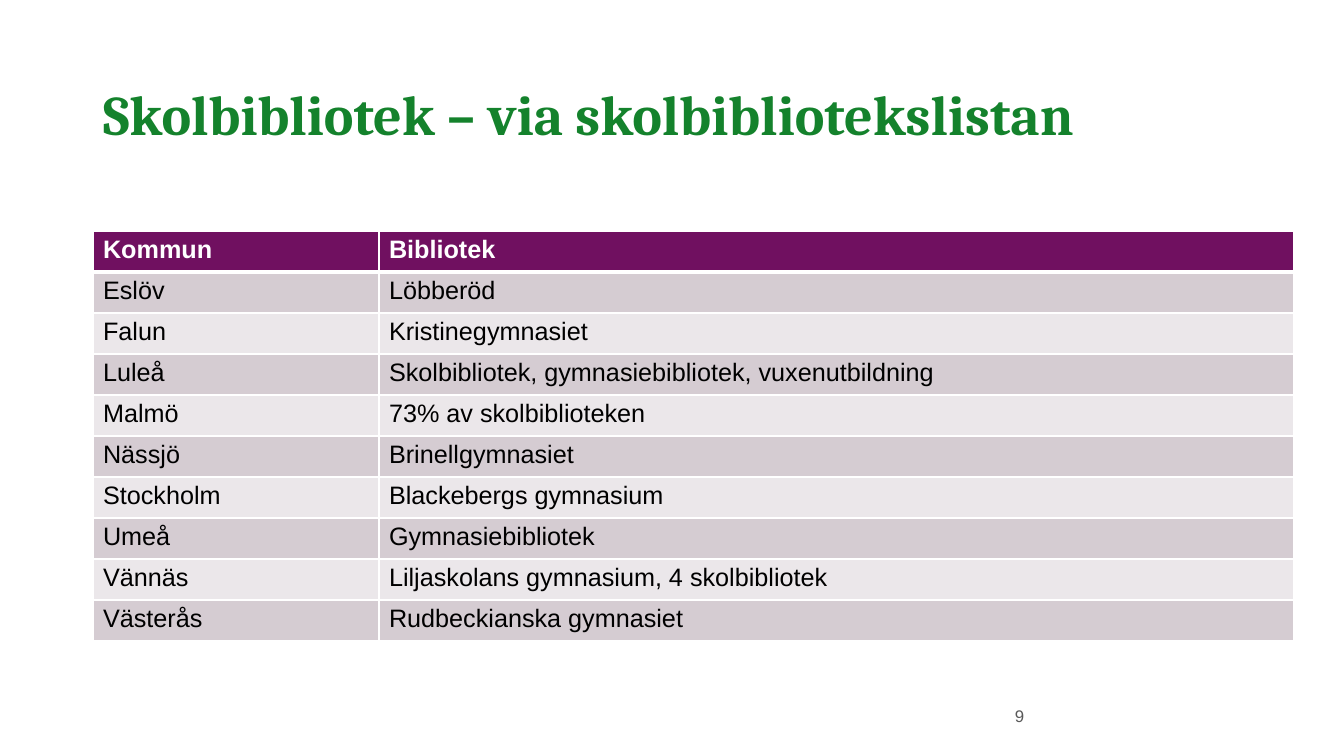
"""Build a slide listing school libraries by municipality."""
from lxml import etree
from pptx import Presentation
from pptx.dml.color import RGBColor
from pptx.enum.text import MSO_ANCHOR, PP_ALIGN
from pptx.oxml.ns import qn
from pptx.util import Emu, Pt

TOP = MSO_ANCHOR.TOP
LEFT = PP_ALIGN.LEFT

GREEN = RGBColor(0x14, 0x82, 0x2C)
PURPLE = RGBColor(0x70, 0x10, 0x60)
MAUVE = RGBColor(0xD5, 0xCC, 0xD2)
PALE = RGBColor(0xEB, 0xE7, 0xEA)
WHITE = RGBColor(0xFF, 0xFF, 0xFF)
BLACK = RGBColor(0x00, 0x00, 0x00)
GREY = RGBColor(0x59, 0x59, 0x59)

HEADING_FONT = "Cambria"
BODY_FONT = "Arial"
PX_PER_INCH = 100.8

LIBRARIES = [
    ("Kommun", "Bibliotek"),
    ("Eslöv", "Löbberöd"),
    ("Falun", "Kristinegymnasiet"),
    ("Luleå", "Skolbibliotek, gymnasiebibliotek, vuxenutbildning"),
    ("Malmö", "73% av skolbiblioteken"),
    ("Nässjö", "Brinellgymnasiet"),
    ("Stockholm", "Blackebergs gymnasium"),
    ("Umeå", "Gymnasiebibliotek"),
    ("Vännäs", "Liljaskolans gymnasium, 4 skolbibliotek"),
    ("Västerås", "Rudbeckianska gymnasiet"),
]


def px(length):
    return Emu(round(length * 914400 / PX_PER_INCH))


class SlideBuilder:
    def __init__(self, presentation):
        layout = presentation.slide_layouts[5]
        self.slide = presentation.slides.add_slide(layout)

    def add_text(self, frame, text, size, color, bold=False, font=BODY_FONT):
        frame.word_wrap = True
        paragraph = frame.paragraphs[0]
        paragraph.alignment = LEFT
        run = paragraph.add_run()
        run.text = text
        run.font.name = font
        run.font.size = Pt(size)
        run.font.bold = bold
        run.font.color.rgb = color
        return paragraph

    def title(self, text, left, top, width, height):
        heading = self.slide.shapes.title
        heading.left, heading.top = px(left), px(top)
        heading.width, heading.height = px(width), px(height)
        heading.text_frame.vertical_anchor = TOP
        line = self.add_text(heading.text_frame, text, 40, GREEN, True, HEADING_FONT)
        line.line_spacing = 0.9

    def label(self, text, left, top, width, height):
        box = self.slide.shapes.add_textbox(px(left), px(top), px(width), px(height))
        self.add_text(box.text_frame, text, 12, GREY)

    def borders(self, cell, bottom):
        properties = cell._tc.get_or_add_tcPr()
        for side, points in (("L", 1), ("R", 1), ("T", 1), ("B", bottom)):
            line = etree.SubElement(properties, qn(f"a:ln{side}"), w=str(Pt(points)))
            fill = etree.SubElement(line, qn("a:solidFill"))
            etree.SubElement(fill, qn("a:srgbClr"), val=str(WHITE))

    def table(self, rows, left, top, column_widths, row_height):
        grid = self.slide.shapes.add_table(
            len(rows), len(column_widths), px(left), px(top),
            px(sum(column_widths)), px(row_height * len(rows))).table
        for column, width in zip(grid.columns, column_widths):
            column.width = px(width)
        for index, values in enumerate(rows):
            grid.rows[index].height = px(row_height)
            header = index == 0
            band = PURPLE if header else (PALE, MAUVE)[index % 2]
            for position, value in enumerate(values):
                cell = grid.cell(index, position)
                self.borders(cell, 3 if header else 1)
                cell.fill.solid()
                cell.fill.fore_color.rgb = band
                self.add_text(cell.text_frame, value, 18, WHITE if header else BLACK, header)


def main():
    presentation = Presentation()
    presentation.slide_width, presentation.slide_height = px(1344), px(756)
    builder = SlideBuilder(presentation)
    builder.title("Skolbibliotek – via skolbibliotekslistan", 93, 82, 1167, 140)
    builder.table(LIBRARIES, 93, 231, (286, 915), 41)
    builder.label("9", 1005, 701, 302, 40)
    presentation.save("out.pptx")


if __name__ == "__main__":
    main()
